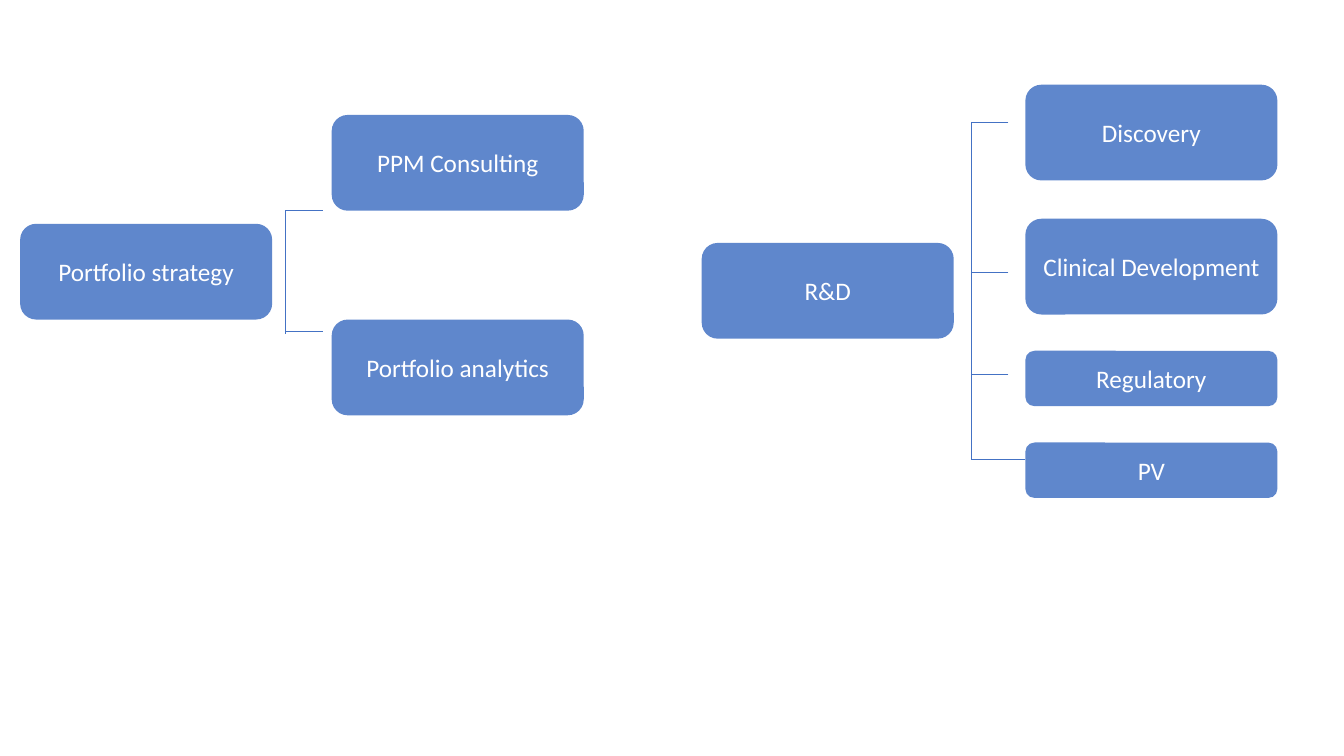
from dataclasses import dataclass
from lxml import etree
from pptx import Presentation
from pptx.dml.color import RGBColor
from pptx.enum.shapes import MSO_CONNECTOR as CONN, MSO_SHAPE as SHAPE
from pptx.enum.text import MSO_ANCHOR as ANCHOR, PP_ALIGN as ALIGN
from pptx.oxml.ns import qn
from pptx.util import Inches, Pt


@dataclass(frozen=True)
class Theme:
    blue: RGBColor = RGBColor(0x44, 0x72, 0xC4)
    white: RGBColor = RGBColor(0xFF, 0xFF, 0xFF)
    alpha: int = 85
    font: str = "Calibri"
    size: float = 18
    line: float = 0.5


THEME = Theme()
BOX_W, TALL, SHORT = 2.5, 0.95, 0.55
BRANCH = 0.37

TREES = [
    {
        "root": ("Portfolio strategy", 0.2, 2.22),
        "child_x": 3.29,
        "children": [("PPM Consulting", 1.14, TALL), ("Portfolio analytics", 3.17, TALL)],
        "trunk": (2.83, 2.09, 3.31),
        "branches": [(2.09, BRANCH), (3.29, BRANCH)],
    },
    {
        "root": ("R&D", 6.96, 2.41),
        "child_x": 10.17,
        "children": [
            ("Discovery", 0.84, TALL),
            ("Clinical Development", 2.17, TALL),
            ("Regulatory", 3.48, SHORT),
            ("PV", 4.39, SHORT),
        ],
        "trunk": (9.63, 1.21, 4.56),
        "branches": [(1.21, BRANCH), (2.7, BRANCH), (3.71, BRANCH), (4.56, 0.54)],
    },
]


def add_box(slide, text, x, y, h):
    sp = slide.shapes.add_shape(SHAPE.ROUNDED_RECTANGLE, Inches(x), Inches(y), Inches(BOX_W), Inches(h))
    sp.shadow.inherit = False
    sp.fill.solid()
    sp.fill.fore_color.rgb = THEME.blue
    color = sp._element.spPr.find(qn("a:solidFill")).find(qn("a:srgbClr"))
    etree.SubElement(color, qn("a:alpha")).set("val", str(THEME.alpha * 1000))
    sp.line.fill.background()
    tf = sp.text_frame
    tf.word_wrap = True
    tf.vertical_anchor = ANCHOR.MIDDLE
    tf.text = text
    p = tf.paragraphs[0]
    p.alignment = ALIGN.CENTER
    font = p.runs[0].font
    font.name, font.size = THEME.font, Pt(THEME.size)
    font.color.rgb = THEME.white


def add_line(slide, x1, y1, x2, y2):
    ln = slide.shapes.add_connector(CONN.STRAIGHT, Inches(x1), Inches(y1), Inches(x2), Inches(y2))
    ln.line.color.rgb = THEME.blue
    ln.line.width = Pt(THEME.line)
    etree.SubElement(ln._element.spPr, qn("a:effectLst"))


def add_tree(slide, tree):
    add_box(slide, *tree["root"], TALL)
    for text, y, h in tree["children"]:
        add_box(slide, text, tree["child_x"], y, h)
    x, top, bottom = tree["trunk"]
    add_line(slide, x, top, x, bottom)
    for y, length in tree["branches"]:
        add_line(slide, x + length, y, x, y)


def main():
    prs = Presentation()
    prs.slide_width, prs.slide_height = Inches(13.33), Inches(7.5)
    slide = prs.slides.add_slide(prs.slide_layouts[6])
    for tree in TREES:
        add_tree(slide, tree)
    prs.save("out.pptx")


if __name__ == "__main__":
    main()
